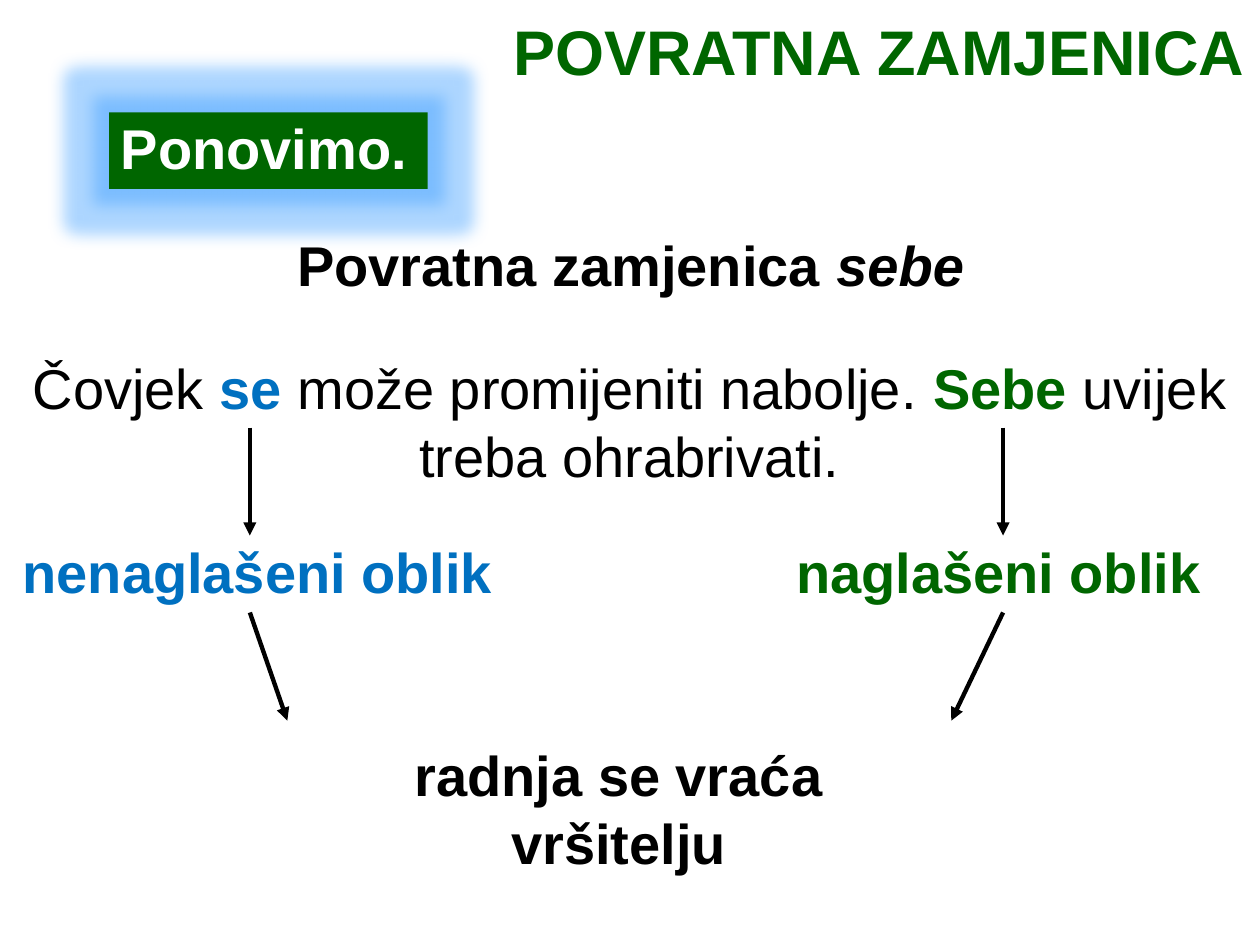
from dataclasses import dataclass

from lxml.etree import SubElement
from pptx import Presentation
from pptx.dml.color import RGBColor
from pptx.enum.shapes import MSO_CONNECTOR, MSO_SHAPE
from pptx.enum.text import MSO_ANCHOR, PP_ALIGN
from pptx.oxml.ns import qn
from pptx.util import Pt


@dataclass(frozen=True)
class Theme:
    font: str = "Arial"
    title_size: float = 36
    body_size: float = 32
    line_width: float = 2.5
    glow_radius: float = 18
    glow_alpha: int = 40
    black: str = "000000"
    white: str = "FFFFFF"
    green: str = "006600"
    blue: str = "0070C0"
    glow: str = "3399FF"


THEME = Theme()


@dataclass(frozen=True)
class Span:
    text: str
    color: str = THEME.black
    bold: bool = True
    italic: bool = False


@dataclass(frozen=True)
class Label:
    left: float
    top: float
    width: float
    height: float
    spans: tuple[Span, ...]
    align: PP_ALIGN = PP_ALIGN.LEFT


@dataclass(frozen=True)
class Arrow:
    start: tuple[float, float]
    end: tuple[float, float]


def place(shape, left: float, top: float, width: float, height: float) -> None:
    shape.left, shape.top = Pt(left), Pt(top)
    shape.width, shape.height = Pt(width), Pt(height)


def write(frame, spans: tuple[Span, ...], align: PP_ALIGN, size: float) -> None:
    frame.word_wrap = True
    para = frame.paragraphs[0]
    para.alignment = align
    for span in spans:
        run = para.add_run()
        run.text = span.text
        run.font.name = THEME.font
        run.font.size = Pt(size)
        run.font.bold = span.bold
        run.font.italic = span.italic
        run.font.color.rgb = RGBColor.from_string(span.color)


def add_label(page, label: Label):
    box = page.shapes.add_textbox(
        Pt(label.left), Pt(label.top), Pt(label.width), Pt(label.height))
    write(box.text_frame, label.spans, label.align, THEME.body_size)
    return box


def add_arrow(page, arrow: Arrow) -> None:
    connector = page.shapes.add_connector(
        MSO_CONNECTOR.STRAIGHT, *map(Pt, arrow.start), *map(Pt, arrow.end))
    connector.line.color.rgb = RGBColor.from_string(THEME.black)
    connector.line.width = Pt(THEME.line_width)
    properties = connector.line._get_or_add_ln()
    SubElement(properties, qn("a:tailEnd"), type="triangle")
    SubElement(connector._element.spPr, qn("a:effectLst"))


def add_glowing_panel(page, left: float, top: float, width: float, height: float) -> None:
    panel = page.shapes.add_shape(
        MSO_SHAPE.RECTANGLE, Pt(left), Pt(top), Pt(width), Pt(height))
    panel.shadow.inherit = False
    panel.fill.solid()
    panel.fill.fore_color.rgb = RGBColor.from_string(THEME.green)
    panel.line.fill.background()
    effects = panel._element.spPr.find(qn("a:effectLst"))
    glow = SubElement(effects, qn("a:glow"), rad=str(Pt(THEME.glow_radius)))
    color = SubElement(glow, qn("a:srgbClr"), val=THEME.glow)
    SubElement(color, qn("a:alpha"), val=str(THEME.glow_alpha * 1000))


LEFT_ARROW_X, RIGHT_ARROW_X = 142.8, 573.2
FORMS_TOP, LINE_HEIGHT = 303.8, 46

LABELS = (
    Label(0.7, 128.2, 719.3, LINE_HEIGHT,
          (Span("Povratna zamjenica "), Span("sebe", italic=True)), PP_ALIGN.CENTER),
    Label(0, 198.7, 719.3, 85,
          (Span("Čovjek ", bold=False),
           Span("se ", THEME.blue),
           Span("može promijeniti nabolje. ", bold=False),
           Span("Sebe ", THEME.green),
           Span("uvijek treba ohrabrivati.", bold=False)), PP_ALIGN.CENTER),
    Label(5.8, FORMS_TOP, 325.4, LINE_HEIGHT, (Span("nenaglašeni oblik", THEME.blue),)),
    Label(447.8, FORMS_TOP, 325.4, LINE_HEIGHT, (Span("naglašeni oblik", THEME.green),)),
    Label(164.2, 419.8, 378.7, 85, (Span("radnja se vraća vršitelju"),), PP_ALIGN.CENTER),
)

ARROWS = (
    Arrow((LEFT_ARROW_X, 244.4), (LEFT_ARROW_X, 306)),
    Arrow((RIGHT_ARROW_X, 244.4), (RIGHT_ARROW_X, 306)),
    Arrow((LEFT_ARROW_X, 350), (164.2, 411.8)),
    Arrow((RIGHT_ARROW_X, 350), (543.6, 411.8)),
)


def main() -> None:
    deck = Presentation()
    deck.slide_width, deck.slide_height = Pt(720), Pt(540)
    page = deck.slides.add_slide(deck.slide_layouts[5])

    # Title
    title = page.shapes.title
    place(title, 159, 0, 559.5, 54.7)
    write(title.text_frame, (Span("POVRATNA ZAMJENICA", THEME.green),),
          PP_ALIGN.RIGHT, THEME.title_size)
    title.text_frame.vertical_anchor = MSO_ANCHOR.BOTTOM
    title.text_frame.paragraphs[0].line_spacing = 0.9

    # Review heading on its glowing panel
    add_glowing_panel(page, 62.3, 64.2, 182, 43.8)
    heading = add_label(page, Label(64.1, 45.4, 213, 60.5, (Span("Ponovimo.", THEME.white),)))
    frame = heading.text_frame
    frame.vertical_anchor = MSO_ANCHOR.BOTTOM
    frame.margin_left = frame.margin_right = Pt(5)
    frame.margin_top = frame.margin_bottom = Pt(2.9)
    frame.paragraphs[0].space_before = Pt(10)

    # Example sentence, the two forms and the conclusion
    for label in LABELS:
        add_label(page, label)
    for arrow in ARROWS:
        add_arrow(page, arrow)

    deck.save("out.pptx")


if __name__ == "__main__":
    main()
